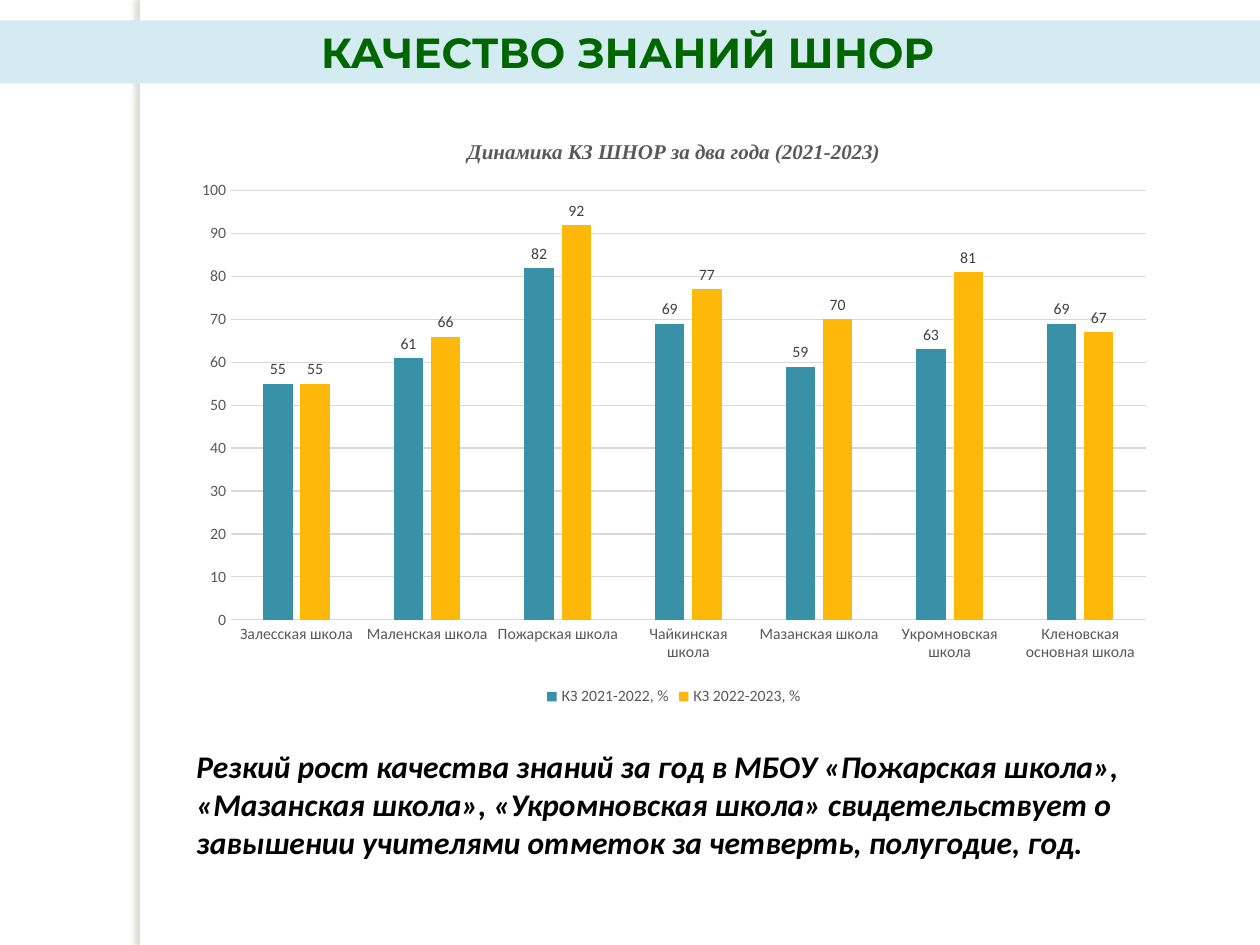
from pptx import Presentation, oxml
from pptx.chart import data
from pptx.dml import color
from pptx.enum import chart as ch, shapes, text
from pptx.oxml import ns
from pptx.util import Cm, Pt

HUES = {"white": "FFFFFF", "band": "D4EBF1", "green": "006600", "black": "000000",
        "shade": "736F63", "grid": "D9D9D9", "axis": "595959", "label": "404040",
        "teal": "3891A7", "gold": "FEB80A"}

SCHOOLS = ["Залесская школа", "Маленская школа", "Пожарская школа",
           "Чайкинская школа", "Мазанская школа", "Укромновская школа",
           "Кленовская основная школа"]
MARKS = [("КЗ 2021-2022, %", "teal", (55, 61, 82, 69, 59, 63, 69)),
         ("КЗ 2022-2023, %", "gold", (55, 66, 92, 77, 70, 81, 67))]


def hue(name):
    return color.RGBColor.from_string(HUES[name])


def paint(fill, name):
    fill.solid()
    fill.fore_color.rgb = hue(name)


def style(font, size, name, face="Calibri", bold=False, slant=False):
    font.size, font.name, font.bold, font.italic = Pt(size), face, bold, slant
    font.color.rgb = hue(name)


def rule(line):
    line.width = Pt(0.75)
    line.color.rgb = hue("grid")


def add_rail(slide, box):
    """White strip behind everything, casting a soft shadow to its left."""
    rail = slide.shapes.add_shape(shapes.MSO_SHAPE.RECTANGLE, *box)
    paint(rail.fill, "white")
    rail.line.fill.background()
    shade = oxml.parse_xml(
        f'<a:effectLst {ns.nsdecls("a")}><a:outerShdw blurRad="{Pt(3)}" '
        f'dist="{Pt(3)}" dir="10800000" algn="tl" rotWithShape="0">'
        f'<a:srgbClr val="{HUES["shade"]}"><a:alpha val="25000"/></a:srgbClr>'
        '</a:outerShdw></a:effectLst>')
    rail.element.spPr.append(shade)
    rail.element.getparent().insert(2, rail.element)


def set_title(slide, box, words):
    band = slide.shapes.title
    band.left, band.top, band.width, band.height = box
    paint(band.fill, "band")
    frame = band.text_frame
    frame.text = words
    frame.auto_size = text.MSO_AUTO_SIZE.NONE
    frame.vertical_anchor = text.MSO_ANCHOR.MIDDLE
    para = frame.paragraphs[0]
    para.alignment = text.PP_ALIGN.CENTER
    style(para.runs[0].font, 24, "green", "Montserrat", bold=True)


def add_bars(slide, box, head):
    table = data.CategoryChartData(number_format="General")
    table.categories = SCHOOLS
    for name, _, vals in MARKS:
        table.add_series(name, vals)
    kind = ch.XL_CHART_TYPE.COLUMN_CLUSTERED
    chart = slide.shapes.add_chart(kind, *box, table).chart
    style(chart.font, 10, "black")

    chart.has_title = True
    frame = chart.chart_title.text_frame
    frame.text = head
    style(frame.paragraphs[0].runs[0].font, 12, "axis", "Times New Roman", True, True)
    chart.chart_title.include_in_layout = False

    chart.has_legend = True
    chart.legend.position = ch.XL_LEGEND_POSITION.BOTTOM
    chart.legend.include_in_layout = False
    style(chart.legend.font, 9, "axis")

    cats, vals = chart.category_axis, chart.value_axis
    for axis in (cats, vals):
        axis.major_tick_mark = axis.minor_tick_mark = ch.XL_TICK_MARK.NONE
        style(axis.tick_labels.font, 9, "axis")
    rule(cats.format.line)
    vals.format.line.fill.background()
    vals.minimum_scale, vals.maximum_scale, vals.major_unit = 0, 100, 10
    rule(vals.major_gridlines.format.line)

    plot = chart.plots[0]
    plot.gap_width, plot.overlap, plot.vary_by_categories = 219, -27, False
    for bars, (_, tint, _) in zip(plot.series, MARKS):
        paint(bars.format.fill, tint)
        bars.invert_if_negative = False
        tags = bars.data_labels
        tags.show_value = True
        tags.position = ch.XL_LABEL_POSITION.OUTSIDE_END
        style(tags.font, 9, "label")


def add_note(slide, box, words):
    frame = slide.shapes.add_textbox(*box).text_frame
    frame.word_wrap = True
    frame.text = words
    style(frame.paragraphs[0].runs[0].font, 18, "black", bold=True, slant=True)


def main():
    deck = Presentation()
    deck.slide_width, deck.slide_height = Cm(25.4), Cm(19.05)
    slide = deck.slides.add_slide(deck.slide_layouts[5])
    add_rail(slide, (Cm(2.82), 0, Cm(0.2), deck.slide_height))
    set_title(slide, (Cm(-0.1), Cm(0.41), Cm(25.5), Cm(1.27)), "КАЧЕСТВО ЗНАНИЙ ШНОР")
    add_note(slide, (Cm(3.71), Cm(14.94), Cm(21), Cm(3.33)),
             "Резкий рост качества знаний за год в МБОУ «Пожарская школа», "
             "«Мазанская школа», «Укромновская школа» свидетельствует о "
             "завышении учителями отметок за четверть, полугодие, год.")
    add_bars(slide, (Cm(3.68), Cm(2.34), Cm(19.81), Cm(11.99)),
             "Динамика КЗ ШНОР за два года (2021-2023)")
    deck.save("out.pptx")


if __name__ == "__main__":
    main()
